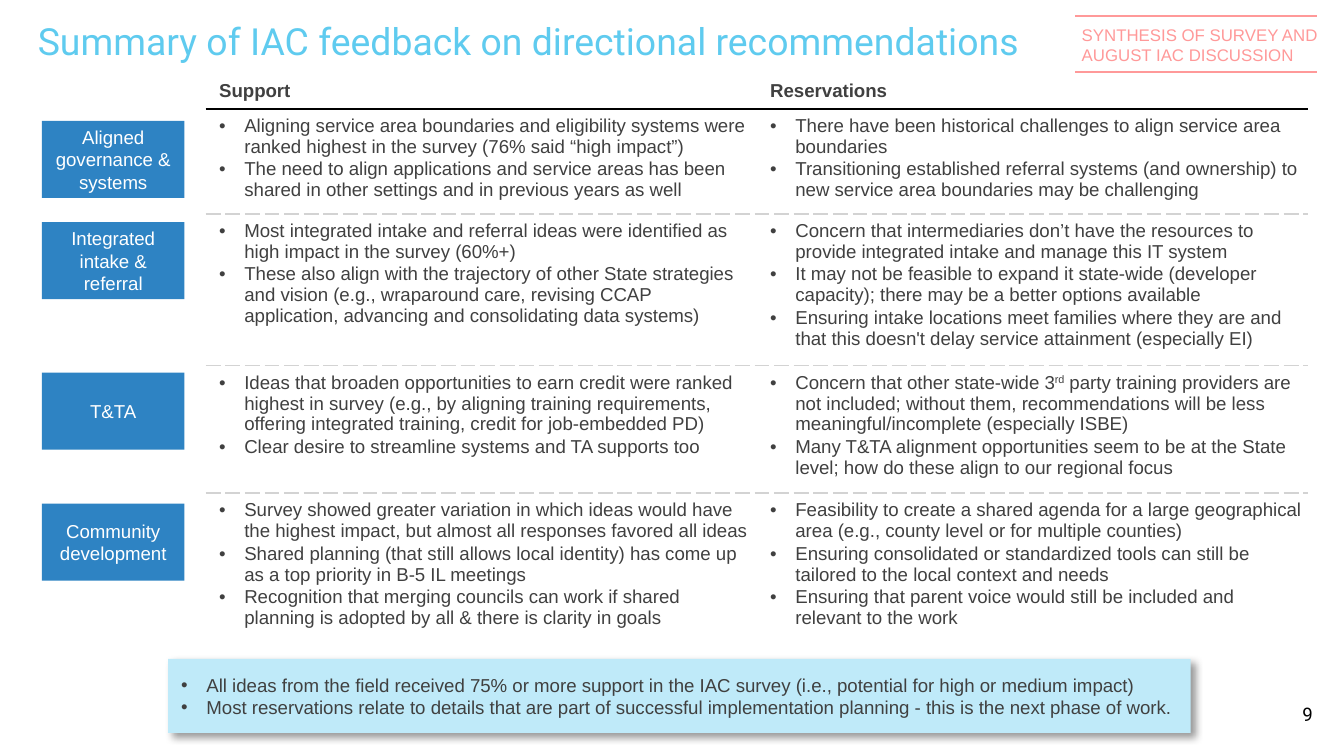
from lxml import etree
from pptx import Presentation
from pptx.dml.color import RGBColor
from pptx.enum.shapes import MSO_CONNECTOR, MSO_SHAPE
from pptx.enum.text import MSO_ANCHOR, PP_ALIGN
from pptx.oxml.ns import qn
from pptx.util import Pt

RECT = MSO_SHAPE.RECTANGLE
LINE = MSO_CONNECTOR.STRAIGHT
TOP, MIDDLE, BOTTOM = MSO_ANCHOR.TOP, MSO_ANCHOR.MIDDLE, MSO_ANCHOR.BOTTOM
LEFT, CENTER, RIGHT = PP_ALIGN.LEFT, PP_ALIGN.CENTER, PP_ALIGN.RIGHT

SKY, BLUE, PALE, PINK = "5FCBEF", "2E83C3", "BFEAF9", "FF9999"
GREY, DASH, BLACK, WHITE = "404040", "D3D3D3", "000000", "FFFFFF"

# Content; text between carets is superscript
TITLE = "Summary of IAC feedback on directional recommendations"
TAG = "SYNTHESIS OF SURVEY AND AUGUST IAC DISCUSSION"
PAGE_NUMBER = "9"
HEADINGS = ("Support", "Reservations")

# Each topic: label, label top, minimum row height, support, reservations
TOPICS = [
    ("Aligned governance & systems", 64.8, 38,
     ["Aligning service area boundaries and eligibility systems were ranked highest in the survey (76% said “high impact”)",
      "The need to align applications and service areas has been shared in other settings and in previous years as well"],
     ["There have been historical challenges to align service area boundaries",
      "Transitioning established referral systems (and ownership) to new service area boundaries may be challenging"]),
    ("Integrated intake & referral", 119, 46,
     ["Most integrated intake and referral ideas were identified as high impact in the survey (60%+)",
      "These also align with the trajectory of other State strategies and vision (e.g., wraparound care, revising CCAP application, advancing and consolidating data systems)"],
     ["Concern that intermediaries don’t have the resources to provide integrated intake and manage this IT system",
      "It may not be feasible to expand it state-wide (developer capacity); there may be a better options available",
      "Ensuring intake locations meet families where they are and that this doesn't delay service attainment (especially EI)"]),
    ("T&TA", 199.6, 38,
     ["Ideas that broaden opportunities to earn credit were ranked highest in survey (e.g., by aligning training requirements, offering integrated training, credit for job-embedded PD)",
      "Clear desire to streamline systems and TA supports too"],
     ["Concern that other state-wide 3^rd^ party training providers are not included; without them, recommendations will be less meaningful/incomplete (especially ISBE)",
      "Many T&TA alignment opportunities seem to be at the State level; how do these align to our regional focus"]),
    ("Community development", 269.8, 46,
     ["Survey showed greater variation in which ideas would have the highest impact, but almost all responses favored all ideas",
      "Shared planning (that still allows local identity) has come up as a top priority in B-5 IL meetings",
      "Recognition that merging councils can work if shared planning is adopted by all & there is clarity in goals"],
     ["Feasibility to create a shared agenda for a large geographical area (e.g., county level or for multiple counties)",
      "Ensuring consolidated or standardized tools can still be tailored to the local context and needs",
      "Ensuring that parent voice would still be included and relevant to the work"]),
]
TAKEAWAYS = [
    "All ideas from the field received 75% or more support in the IAC survey (i.e., potential for high or medium impact)",
    "Most reservations relate to details that are part of successful implementation planning - this is the next phase of work.",
]

HEADER_HEIGHT = 11
TABLE_HEIGHT = 306
COLUMN_WIDTH = 295.2
INDENT = 13.5


def color(value):
    return RGBColor.from_string(value)


def add_xml(parent, tag, **attributes):
    return etree.SubElement(parent, qn(tag), attributes)


def write(frame, lines, size, ink, font="Arial", bold=False,
          align=LEFT, bullets=False, after=0):
    for index, line in enumerate(lines):
        para = frame.add_paragraph() if index else frame.paragraphs[0]
        para.alignment = align
        para.space_after = Pt(after)
        for part, text in enumerate(line.split("^")):
            span = para.add_run()
            span.text = text
            span.font.size, span.font.name, span.font.bold = Pt(size), font, bold
            span.font.color.rgb = color(ink)
            if part % 2:
                span.font._element.set("baseline", "30000")
        if bullets:
            properties = para._p.get_or_add_pPr()
            properties.set("marL", str(Pt(INDENT)))
            properties.set("indent", str(-Pt(INDENT)))
            add_xml(properties, "a:buFont", typeface="Arial")
            add_xml(properties, "a:buChar", char="•")


def set_frame(frame, anchor, side=7.2):
    frame.word_wrap = True
    frame.vertical_anchor = anchor
    frame.margin_left = frame.margin_right = Pt(side)
    frame.margin_top = frame.margin_bottom = Pt(3.6)
    return frame


def add_text(left, top, width, height, anchor=TOP):
    box = page.shapes.add_textbox(Pt(left), Pt(top), Pt(width), Pt(height))
    return set_frame(box.text_frame, anchor)


def add_rect(shapes, left, top, width, height, fill, side=7.2):
    box = shapes.add_shape(RECT, Pt(left), Pt(top), Pt(width), Pt(height))
    box.shadow.inherit = False
    box.fill.solid()
    box.fill.fore_color.rgb = color(fill)
    box.line.fill.background()
    set_frame(box.text_frame, MIDDLE, side)
    return box


def set_borders(cell, top, bottom):
    properties = cell._tc.get_or_add_tcPr()
    for side, style in (("L", None), ("R", None), ("T", top), ("B", bottom)):
        line = add_xml(properties, f"a:ln{side}", w=str(Pt(1)))
        if style is None:
            add_xml(line, "a:noFill")
        else:
            ink, dash = style
            fill = add_xml(line, "a:solidFill")
            add_xml(fill, "a:srgbClr", val=ink)
            add_xml(line, "a:prstDash", val=dash)


deck = Presentation()
deck.slide_width, deck.slide_height = Pt(720), Pt(405)
page = deck.slides.add_slide(deck.slide_layouts[6])

# Title and page number
write(add_text(13.2, 6.2, 717, 77.8), [TITLE], 20, SKY, "Roboto")
write(add_text(667.2, 367.2, 43.2, 31, MIDDLE), [PAGE_NUMBER], 10, BLACK,
      "Roboto", align=RIGHT)

# Feedback table; rows grow to fit their text
row_heights = [HEADER_HEIGHT] + [topic[2] for topic in TOPICS]
table_frame = page.shapes.add_table(
    len(row_heights), len(HEADINGS), Pt(110.2), Pt(39),
    Pt(COLUMN_WIDTH * len(HEADINGS)), Pt(TABLE_HEIGHT))
table = table_frame.table
table.first_row = table.horz_banding = False
for column in table.columns:
    column.width = Pt(COLUMN_WIDTH)
for row, height in zip(table.rows, row_heights):
    row.height = Pt(height)
table_frame.height = Pt(TABLE_HEIGHT)

rules = [None, (BLACK, "solid")] + [(DASH, "sysDash")] * (len(TOPICS) - 1) + [None]
table_rows = [[[heading] for heading in HEADINGS]] + [topic[3:] for topic in TOPICS]
for row, contents in enumerate(table_rows):
    is_header = row == 0
    for column, lines in enumerate(contents):
        cell = table.cell(row, column)
        cell.vertical_anchor = BOTTOM if is_header else TOP
        cell.margin_left = Pt(7.2)
        cell.margin_right = cell.margin_top = cell.margin_bottom = Pt(3.6)
        set_borders(cell, rules[row], rules[row + 1])
        cell.fill.background()
        write(cell.text_frame, lines, 10, GREY, bold=is_header,
              bullets=not is_header, after=0 if is_header else 1)

# Topic labels
for label, top, *_ in TOPICS:
    box = add_rect(page.shapes, 22.5, top, 76.3, 41.3, BLUE, side=5)
    write(box.text_frame, [label], 10, WHITE, align=CENTER)

# Tag between two rules
tag = page.shapes.add_group_shape()
box = add_rect(tag.shapes, 572.4, 10.8, 144.7, 26, WHITE)
write(box.text_frame, [TAG], 9, PINK)
for y in (38.7, 8.6):
    rule = tag.shapes.add_connector(LINE, Pt(576), Pt(y), Pt(705.8), Pt(y))
    rule.line.color.rgb = color(PINK)
    rule.line.width = Pt(1)
    add_xml(rule._element.spPr, "a:effectLst")

# Takeaway panel with a soft shadow
panel = add_rect(page.shapes, 90, 353, 547.9, 39.6, PALE)
write(panel.text_frame, TAKEAWAYS, 10, GREY, bullets=True)
effects = panel._element.spPr.find(qn("a:effectLst"))
shadow = add_xml(effects, "a:outerShdw", blurRad=str(Pt(4)), dist=str(Pt(3)),
                 dir="2700000", algn="tl", rotWithShape="0")
shade = add_xml(shadow, "a:srgbClr", val=BLACK)
add_xml(shade, "a:alpha", val="40000")

deck.save("out.pptx")
